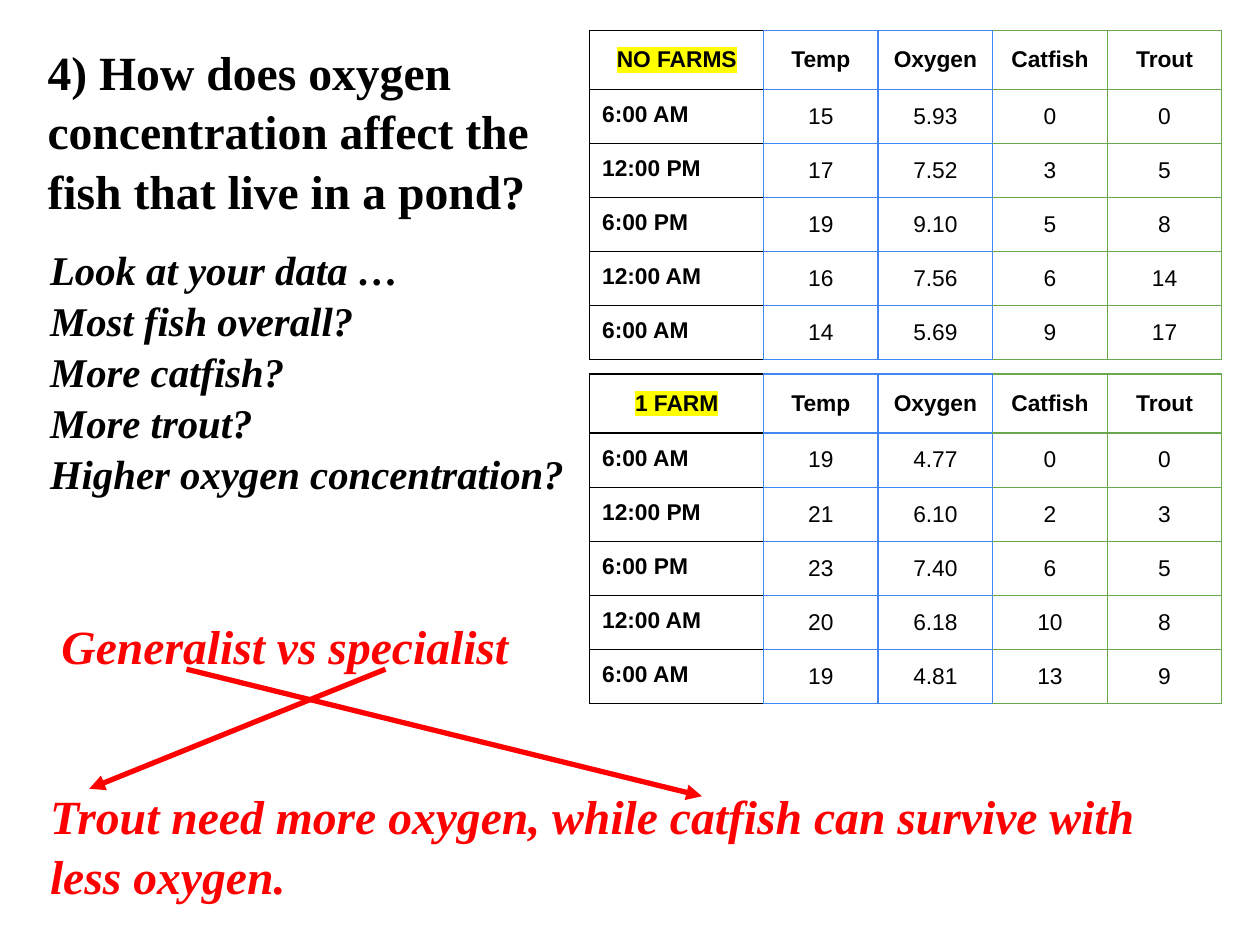
from lxml.etree import SubElement
from pptx import Presentation
from pptx.dml.color import RGBColor
from pptx.enum.shapes import MSO_CONNECTOR
from pptx.enum.text import MSO_ANCHOR, MSO_AUTO_SIZE, PP_ALIGN
from pptx.oxml.ns import qn
from pptx.util import Cm, Pt

BLACK, RED, YELLOW = "000000", "FF0000", "FFFF00"
BLUE, GREEN = "4285F4", "6AA84F"
HEADINGS = ["Temp", "Oxygen", "Catfish", "Trout"]
TIMES = ["6:00 AM", "12:00 PM", "6:00 PM", "12:00 AM", "6:00 AM"]
NO_FARMS = [
    ("15", "5.93", "0", "0"),
    ("17", "7.52", "3", "5"),
    ("19", "9.10", "5", "8"),
    ("16", "7.56", "6", "14"),
    ("14", "5.69", "9", "17"),
]
ONE_FARM = [
    ("19", "4.77", "0", "0"),
    ("21", "6.10", "2", "3"),
    ("23", "7.40", "6", "5"),
    ("20", "6.18", "10", "8"),
    ("19", "4.81", "13", "9"),
]
# Left, right, top and bottom border colours of each column
COLUMN_BORDERS = [
    (BLACK, BLUE, BLACK, BLACK),
    (BLUE,) * 4,
    (BLUE,) * 4,
    (BLUE, GREEN, GREEN, GREEN),
    (GREEN,) * 4,
]
COLUMN_WIDTHS = [3.5] + [2.31] * 4
ROW_HEIGHTS = [1.19] + [1.09] * 5


def rgb(color):
    return RGBColor.from_string(color)


def add_run(paragraph, text, font_name, size, color=BLACK, bold=False, italic=False):
    run = paragraph.add_run()
    run.text = text
    font = run.font
    font.name, font.size = font_name, Pt(size)
    font.bold, font.italic = bold, italic
    font.color.rgb = rgb(color)
    return run


def highlight(run, color):
    properties = run.font._element
    mark = SubElement(properties, qn("a:highlight"))
    SubElement(mark, qn("a:srgbClr"), val=color)
    properties.find(qn("a:solidFill")).addnext(mark)


def add_text(slide, box, lines, size, color=BLACK, italic=True):
    shape = slide.shapes.add_textbox(*map(Cm, box))
    frame = shape.text_frame
    frame.word_wrap = True
    frame.auto_size = MSO_AUTO_SIZE.SHAPE_TO_FIT_TEXT
    for index, line in enumerate(lines):
        paragraph = frame.add_paragraph() if index else frame.paragraphs[0]
        paragraph.line_spacing = 1.04
        add_run(paragraph, line, "Times New Roman", size, color, True, italic)


def set_borders(cell, colors):
    properties = cell._tc.get_or_add_tcPr()
    for side, color in zip("LRTB", colors):
        line = SubElement(properties, qn(f"a:ln{side}"), w=str(Pt(0.75)))
        fill = SubElement(line, qn("a:solidFill"))
        SubElement(fill, qn("a:srgbClr"), val=color)


def fill_cell(cell, text, row, column):
    """Write one cell: bold header row and time column, plain centred values."""
    is_time = row > 0 and column == 0
    cell.margin_left = cell.margin_right = Cm(0.25)
    cell.margin_top = cell.margin_bottom = Cm(0.25)
    cell.vertical_anchor = MSO_ANCHOR.TOP if is_time else MSO_ANCHOR.MIDDLE
    paragraph = cell.text_frame.paragraphs[0]
    paragraph.alignment = PP_ALIGN.LEFT if is_time else PP_ALIGN.CENTER
    run = add_run(paragraph, text, "Arial", 13, bold=row == 0 or column == 0)
    if row == 0 and column == 0:
        highlight(run, YELLOW)
    set_borders(cell, COLUMN_BORDERS[column])
    cell.fill.background()


def add_pond_table(slide, top, title, values):
    rows = [(title, *HEADINGS)]
    rows += [(time, *numbers) for time, numbers in zip(TIMES, values)]
    table = slide.shapes.add_table(
        len(rows), len(COLUMN_WIDTHS), Cm(11.89), Cm(top),
        Cm(sum(COLUMN_WIDTHS)), Cm(sum(ROW_HEIGHTS)),
    ).table
    table.first_row = table.horz_banding = False
    for column, width in zip(table.columns, COLUMN_WIDTHS):
        column.width = Cm(width)
    for row, height in zip(table.rows, ROW_HEIGHTS):
        row.height = Cm(height)
    for row, texts in enumerate(rows):
        for column, text in enumerate(texts):
            fill_cell(table.cell(row, column), text, row, column)


def add_arrow(slide, start, end):
    arrow = slide.shapes.add_connector(
        MSO_CONNECTOR.STRAIGHT, *map(Cm, start), *map(Cm, end)
    )
    arrow.line.color.rgb = rgb(RED)
    arrow.line.width = Pt(3)
    SubElement(arrow.line._get_or_add_ln(), qn("a:tailEnd"), type="triangle")
    SubElement(arrow._element.spPr, qn("a:effectLst"))


def main():
    presentation = Presentation()
    presentation.slide_width, presentation.slide_height = Cm(25.4), Cm(19.05)
    slide = presentation.slides.add_slide(presentation.slide_layouts[6])

    question = "4) How does oxygen concentration affect the fish that live in a pond?"
    add_text(slide, (0.71, 0.69, 10.74, 3.73), [question], 27.2, italic=False)
    add_pond_table(slide, 0.61, "NO FARMS", NO_FARMS)
    add_pond_table(slide, 7.54, "1 FARM", ONE_FARM)

    prompts = [
        "Look at your data …",
        "Most fish overall?",
        "More catfish?",
        "More trout?",
        "Higher oxygen concentration?",
    ]
    add_text(slide, (0.76, 4.78, 11.79, 5.23), prompts, 23.3)
    answer = "Trout need more oxygen, while catfish can survive with less oxygen."
    add_text(slide, (0.76, 15.7, 23.47, 2.59), [answer], 27.2, RED)
    add_text(slide, (0.99, 12.27, 10.26, 1.42), ["Generalist vs specialist"], 27.2, RED)

    add_arrow(slide, (7.77, 13.49), (1.8, 15.9))
    add_arrow(slide, (3.76, 13.49), (14.15, 16.05))
    presentation.save("out.pptx")


if __name__ == "__main__":
    main()
